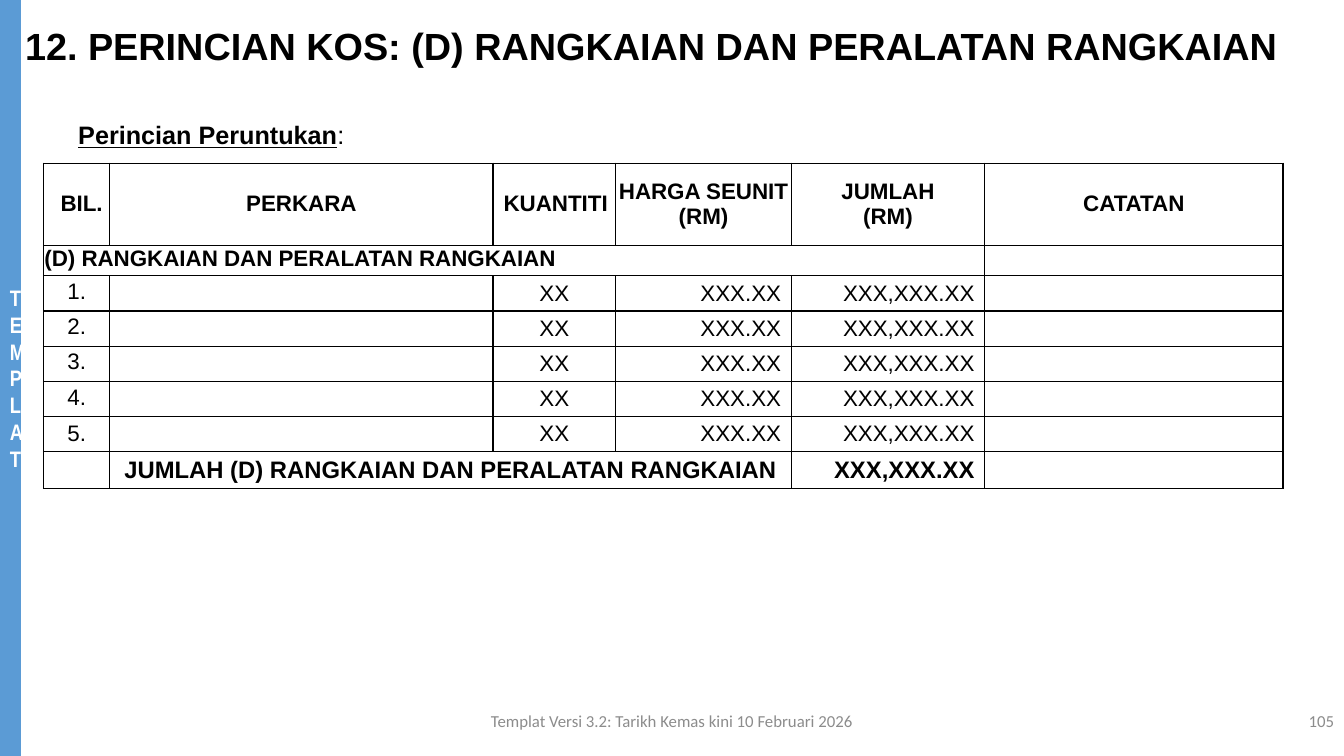
from pptx import Presentation
from pptx import util as u
from pptx.dml.color import RGBColor
from pptx.enum import shapes, text
from pptx.oxml import parse_xml
from pptx.oxml.ns import nsdecls

Pt = u.Pt
LEFT, CENTER, RIGHT = text.PP_ALIGN.LEFT, text.PP_ALIGN.CENTER, text.PP_ALIGN.RIGHT
TOP, MIDDLE = text.MSO_ANCHOR.TOP, text.MSO_ANCHOR.MIDDLE

# Content
TITLE = "12. PERINCIAN KOS: (D) RANGKAIAN DAN PERALATAN RANGKAIAN"
SUBTITLE = "Perincian Peruntukan"
SIDEBAR = "TEMPLAT"
FOOTER = "Templat Versi 3.2: Tarikh Kemas kini 10 Februari 2026"
PAGE_NUMBER = "105"
HEADERS = ["BIL.", "PERKARA", "KUANTITI", "HARGA SEUNIT\n(RM)", "JUMLAH\n(RM)", "CATATAN"]
SECTION = "(D) RANGKAIAN DAN PERALATAN RANGKAIAN"
ITEM_COUNT = 5
QUANTITY, UNIT_PRICE, AMOUNT = "XX", "XXX.XX", "XXX,XXX.XX"
TOTAL = "JUMLAH (D) RANGKAIAN DAN PERALATAN RANGKAIAN"

THEME = {
    "ink": "000000", "bar": "5B9BD5", "white": "FFFFFF", "grey": "8C8C8C",
    "main": "Arial", "narrow": "Arial Narrow", "small": "Calibri",
    "title": 27, "subtitle": 18, "table": 16, "total": 17, "footer": 12,
}
PAGE_W, PAGE_H = 960, 540
COLUMNS = [47.5, 273.6, 87.8, 125.3, 138.2, 213.1]
ROWS = [58.5, 22] + [25.1] * ITEM_COUNT + [26.4]
HEADER_INDENT = {0: 7.2, 2: 2}
TIGHT, NUMBER_INSET = (0.7, 0, 0.7, 0), (7.2, 0, 7.2, 0)


def color(name):
    return RGBColor.from_string(THEME[name])


def add_span(para, words, size, font="main", ink="ink", bold=False, underline=False):
    span = para.add_run()
    span.text = words
    span.font.size, span.font.name = Pt(THEME[size]), THEME[font]
    span.font.bold, span.font.underline = bold, underline
    span.font.color.rgb = color(ink)


def write(frame, words, align=LEFT, spacing=None, **style):
    for index, line in enumerate(words.split("\n")):
        para = frame.add_paragraph() if index else frame.paragraphs[0]
        para.alignment = align
        if spacing:
            para.line_spacing = Pt(spacing)
        add_span(para, line, **style)


def add_label(page, area, words, anchor=TOP, **style):
    box = page.shapes.add_textbox(*map(Pt, area))
    box.text_frame.word_wrap = True
    box.text_frame.vertical_anchor = anchor
    write(box.text_frame, words, **style)
    return box


def format_cell(cell):
    """Black borders, no fill, narrow margins."""
    properties = cell._tc.get_or_add_tcPr()
    for side in "LRTB":
        properties.append(parse_xml(
            f'<a:ln{side} {nsdecls("a")} w="12700"><a:solidFill>'
            f'<a:srgbClr val="{THEME["ink"]}"/></a:solidFill></a:ln{side}>'))
    cell.fill.background()
    set_margins(cell, TIGHT)
    cell.vertical_anchor = MIDDLE


def set_margins(cell, inset):
    cell.margin_left, cell.margin_top, cell.margin_right, cell.margin_bottom = map(Pt, inset)


def fill_cell(cell, words, inset=TIGHT, size="table", **style):
    set_margins(cell, inset)
    write(cell.text_frame, words, size=size, **style)


def add_cost_table(page):
    frame = page.shapes.add_table(len(ROWS), len(COLUMNS), Pt(31), Pt(116.6),
                                  Pt(sum(COLUMNS)), Pt(sum(ROWS)))
    table = frame.table
    table.first_row = table.horz_banding = False
    for column, width in zip(table.columns, COLUMNS):
        column.width = Pt(width)
    for row, height in zip(table.rows, ROWS):
        row.height = Pt(height)
    for cell in table.iter_cells():
        format_cell(cell)

    # Header and section rows
    for index, header in enumerate(HEADERS):
        inset = (HEADER_INDENT.get(index, 0), 0, 0, 0)
        fill_cell(table.cell(0, index), header, inset, align=CENTER, bold=True)
    table.cell(1, 0).merge(table.cell(1, 4))
    fill_cell(table.cell(1, 0), SECTION, spacing=15.7, bold=True)

    # Item rows
    for number in range(1, ITEM_COUNT + 1):
        row = number + 1
        spacing = 15.7 if number < ITEM_COUNT else None
        fill_cell(table.cell(row, 0), f"{number}.", align=CENTER, spacing=spacing)
        fill_cell(table.cell(row, 2), QUANTITY, align=CENTER)
        fill_cell(table.cell(row, 3), UNIT_PRICE, NUMBER_INSET, align=RIGHT)
        fill_cell(table.cell(row, 4), AMOUNT, NUMBER_INSET, align=RIGHT)

    # Total row
    last = len(ROWS) - 1
    table.cell(last, 1).merge(table.cell(last, 3))
    fill_cell(table.cell(last, 1), TOTAL, align=CENTER, size="total", bold=True)
    fill_cell(table.cell(last, 4), AMOUNT, NUMBER_INSET, align=RIGHT, size="total", bold=True)


def main():
    deck = Presentation()
    deck.slide_width, deck.slide_height = Pt(PAGE_W), Pt(PAGE_H)
    page = deck.slides.add_slide(deck.slide_layouts[6])

    # Sidebar, one letter a line
    bar = page.shapes.add_shape(shapes.MSO_SHAPE.RECTANGLE, 0, 0, Pt(15), Pt(PAGE_H))
    bar.shadow.inherit = False
    bar.fill.solid()
    bar.fill.fore_color.rgb = color("bar")
    bar.line.fill.background()
    bar.text_frame.word_wrap = True
    bar.text_frame.vertical_anchor = MIDDLE
    write(bar.text_frame, SIDEBAR, align=CENTER, size="table", font="narrow",
          ink="white", bold=True)

    # Table, headings and footer
    add_cost_table(page)
    subtitle = add_label(page, (48.8, 82, 601, 29), SUBTITLE, size="subtitle",
                         bold=True, underline=True)
    add_span(subtitle.text_frame.paragraphs[0], ":", size="subtitle")
    add_label(page, (10.8, 13, 949, 57.6), TITLE, size="title", bold=True)
    small = {"anchor": MIDDLE, "size": "footer", "font": "small", "ink": "grey"}
    add_label(page, (744, 500.5, 216, 28.8), PAGE_NUMBER, align=RIGHT, **small)
    add_label(page, (318, 500.5, 324, 28.8), FOOTER, align=CENTER, **small)

    deck.save("out.pptx")


if __name__ == "__main__":
    main()
